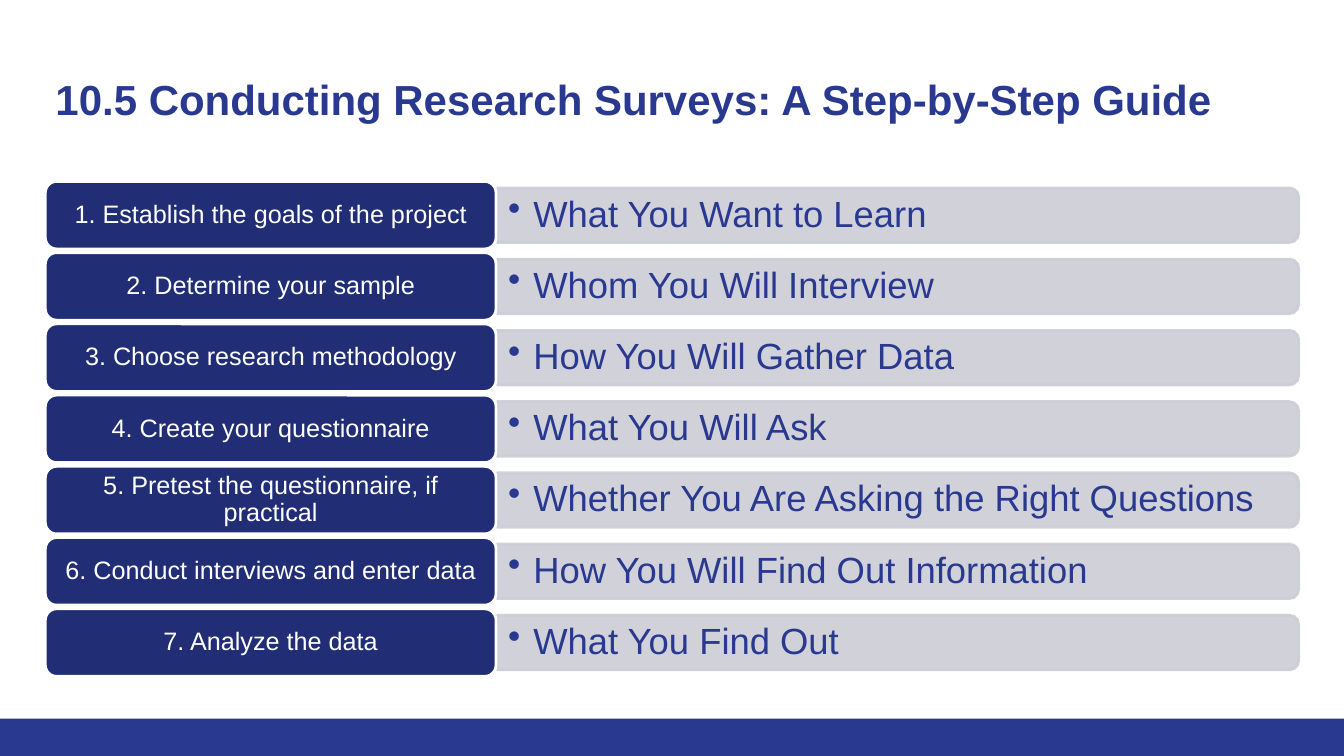
from lxml import etree
from pptx import Presentation
from pptx.dml.color import RGBColor
from pptx.enum.shapes import MSO_SHAPE
from pptx.enum.text import MSO_ANCHOR, PP_ALIGN
from pptx.oxml.ns import qn
from pptx.util import Inches, Pt

RECTANGLE = MSO_SHAPE.RECTANGLE
ROUNDED = MSO_SHAPE.ROUNDED_RECTANGLE
ROUND_TOP = MSO_SHAPE.ROUND_2_SAME_RECTANGLE
TOP, MIDDLE = MSO_ANCHOR.TOP, MSO_ANCHOR.MIDDLE
LEFT, CENTER = PP_ALIGN.LEFT, PP_ALIGN.CENTER

COLORS = {"blue": "2A3990", "navy": "212D74", "gray": "CDCDD6", "white": "FFFFFF"}
FONT = "Arial"
WIDTH, HEIGHT = 13.33, 7.5

# Grid: one row per step, a label column and a detail column
FIRST_ROW, LAST_ROW = 1.8, 6.04
ROW_HEIGHT, BAR_HEIGHT, DETAIL_HEIGHT = 0.67, 0.54, 0.49
LABEL_LEFT, LABEL_WIDTH = 0.45, 4.47
DETAIL_LEFT, BAR_WIDTH, DETAIL_WIDTH = 4.93, 7.95, 7.93
FOOTER_HEIGHT = 0.37

TITLE = "10.5 Conducting Research Surveys: A Step-by-Step Guide"
STEPS = [
    ("1. Establish the goals of the project", "What You Want to Learn"),
    ("2. Determine your sample", "Whom You Will Interview"),
    ("3. Choose research methodology", "How You Will Gather Data"),
    ("4. Create your questionnaire", "What You Will Ask"),
    ("5. Pretest the questionnaire, if practical",
     "Whether You Are Asking the Right Questions"),
    ("6. Conduct interviews and enter data", "How You Will Find Out Information"),
    ("7. Analyze the data", "What You Find Out"),
]


def color(name):
    return RGBColor.from_string(COLORS[name])


def write(shape, text, size, color_name, align, anchor, insets, bold=False):
    """Set the text of a shape and return its paragraph."""
    frame = shape.text_frame
    frame.text = text
    frame.word_wrap = True
    frame.vertical_anchor = anchor
    frame.margin_left = frame.margin_right = Inches(insets[0])
    frame.margin_top = frame.margin_bottom = Inches(insets[1])
    paragraph = frame.paragraphs[0]
    paragraph.alignment = align
    paragraph.line_spacing = 0.9
    font = paragraph.runs[0].font
    font.name, font.size, font.bold = FONT, Pt(size), bold
    font.color.rgb = color(color_name)
    return paragraph


def add_block(slide, kind, box, fill, line=None):
    shape = slide.shapes.add_shape(kind, *map(Inches, box))
    shape.shadow.inherit = False
    shape.fill.solid()
    shape.fill.fore_color.rgb = color(fill)
    if line:
        shape.line.color.rgb = color(line)
        shape.line.width = Pt(2)
    else:
        shape.line.fill.background()
    return shape


def add_bullet(paragraph):
    properties = paragraph._p.get_or_add_pPr()
    properties.set("marL", str(Inches(0.25)))
    properties.set("indent", str(-Inches(0.25)))
    etree.SubElement(properties, qn("a:buChar")).set("char", "•")


def set_opacity(shape, percent):
    for fill_color in shape._element.spPr.iter(qn("a:srgbClr")):
        etree.SubElement(fill_color, qn("a:alpha")).set("val", str(percent * 1000))


def add_title(slide):
    title = slide.shapes.title
    title.left, title.top = Inches(0.45), Inches(0.6)
    title.width, title.height = Inches(12.42), Inches(0.89)
    paragraph = write(title, TITLE, 30, "blue", LEFT, TOP, (0.1, 0.13), bold=True)
    paragraph.line_spacing = 1.0


def add_bar(slide, middle):
    """Add a bar whose rounded end points right: a quarter-turned shape."""
    center = DETAIL_LEFT + BAR_WIDTH / 2
    box = (center - BAR_HEIGHT / 2, middle - BAR_WIDTH / 2, BAR_HEIGHT, BAR_WIDTH)
    bar = add_block(slide, ROUND_TOP, box, "gray", "gray")
    bar.rotation = 90
    set_opacity(bar, 90)


def add_step(slide, top, label, detail):
    middle = top + ROW_HEIGHT / 2
    add_bar(slide, middle)
    # Bulleted detail over the bar
    box = (DETAIL_LEFT, middle - DETAIL_HEIGHT / 2, DETAIL_WIDTH, DETAIL_HEIGHT)
    textbox = slide.shapes.add_textbox(*map(Inches, box))
    add_bullet(write(textbox, detail, 26, "blue", LEFT, MIDDLE, (0.11, 0.05)))
    # Step label
    box = (LABEL_LEFT, top, LABEL_WIDTH, ROW_HEIGHT)
    block = add_block(slide, ROUNDED, box, "navy", "white")
    write(block, label, 18, "white", CENTER, MIDDLE, (0.07, 0.04))


def main():
    presentation = Presentation()
    presentation.slide_width = Inches(WIDTH)
    presentation.slide_height = Inches(HEIGHT)
    title_only = presentation.slide_layouts[5]
    slide = presentation.slides.add_slide(title_only)

    # Footer band and title
    footer = (0, HEIGHT - FOOTER_HEIGHT, WIDTH, FOOTER_HEIGHT)
    add_block(slide, RECTANGLE, footer, "blue")
    add_title(slide)

    # Steps, evenly spaced
    pitch = (LAST_ROW - FIRST_ROW) / (len(STEPS) - 1)
    for row, (label, detail) in enumerate(STEPS):
        add_step(slide, FIRST_ROW + row * pitch, label, detail)

    presentation.save("out.pptx")


if __name__ == "__main__":
    main()
